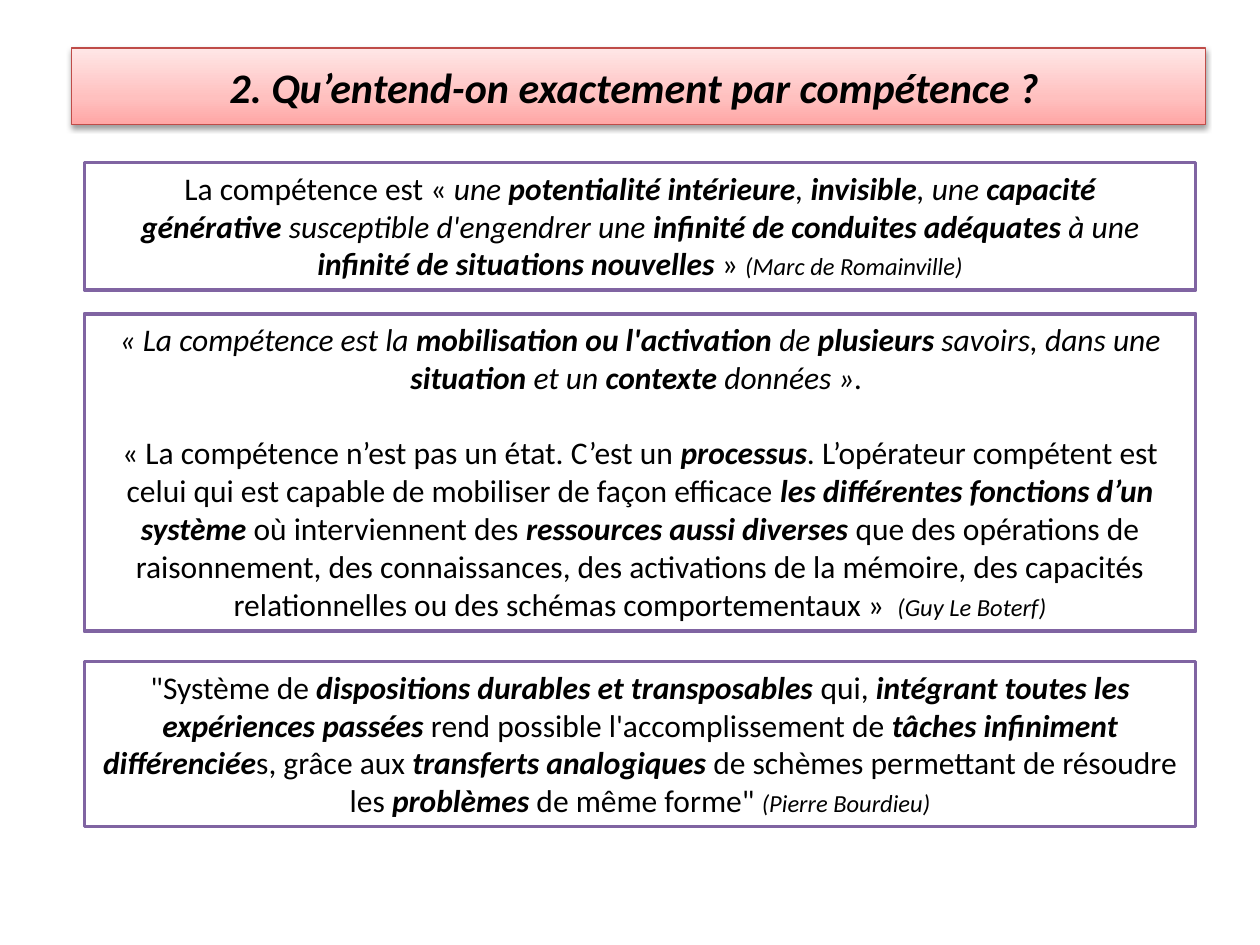
from copy import deepcopy
from dataclasses import dataclass

from lxml import etree
from pptx import Presentation
from pptx.dml.color import RGBColor
from pptx.enum.shapes import MSO_SHAPE
from pptx.enum.text import MSO_ANCHOR, PP_ALIGN
from pptx.oxml.ns import qn
from pptx.util import Inches, Pt

RECTANGLE = MSO_SHAPE.RECTANGLE
CENTER = PP_ALIGN.CENTER
TOP, MIDDLE = MSO_ANCHOR.TOP, MSO_ANCHOR.MIDDLE


@dataclass(frozen=True)
class Theme:
    font: str = "Calibri"
    title_size: float = 24
    body_size: float = 18
    source_size: float = 14
    paragraph_gap: float = 21.6
    text: str = "000000"
    box_fill: str = "FFFFFF"
    box_line: str = "8064A2"
    title_line: str = "BF4C48"
    title_stops: tuple = ((0, "FFA6A5"), (0.35, "FFC0BF"), (1, "FFE7E7"))


THEME = Theme()

# Run styles: (bold, italic, size)
PLAIN = (False, False, None)
ITALIC = (False, True, None)
STRONG = (True, True, None)
SOURCE = (False, True, THEME.source_size)

TITLE = "2. Qu’entend-on exactement par compétence ? "
TITLE_BOX = (0.57, 0.38, 9, 0.61)
QUOTE_LEFT, QUOTE_WIDTH = 0.67, 8.82

# Each quote: top, height, paragraphs of (space before, runs)
QUOTES = [
    (1.29, 1.01, [
        (0, [("La compétence est « ", PLAIN), ("une ", ITALIC),
             ("potentialité intérieure", STRONG), (", ", ITALIC),
             ("invisible", STRONG), (", une ", ITALIC), ("capacité", STRONG)]),
        (0, [("générative ", STRONG), ("susceptible d'engendrer une ", ITALIC),
             ("infinité de conduites adéquates ", STRONG), ("à une", ITALIC)]),
        (0, [("infinité de situations nouvelles", STRONG), (" » ", PLAIN),
             ("(Marc de Romainville)", SOURCE)]),
    ]),
    (2.49, 2.52, [
        (0, [("« La compétence est la ", ITALIC),
             ("mobilisation ou l'activation ", STRONG), ("de ", ITALIC),
             ("plusieurs", STRONG), (" savoirs, dans une", ITALIC)]),
        (0, [("situation", STRONG), (" et un ", ITALIC),
             ("contexte ", STRONG), ("données ». ", ITALIC)]),
        (THEME.paragraph_gap, [
            ("« La compétence n’est pas un état. C’est un ", PLAIN),
            ("processus", STRONG),
            (". L’opérateur compétent est celui qui est capable de mobiliser "
             "de façon efficace ", PLAIN),
            ("les différentes fonctions d’un système ", STRONG),
            ("où interviennent des ", PLAIN),
            ("ressources aussi diverses ", STRONG),
            ("que des opérations de raisonnement, des connaissances, des "
             "activations de la mémoire, des capacités relationnelles ou des "
             "schémas comportementaux » ", PLAIN),
            (" (Guy Le Boterf)", SOURCE)]),
    ]),
    (5.25, 1.31, [
        (0, [("\"Système de ", PLAIN),
             ("dispositions durables et transposables ", STRONG),
             ("qui,", PLAIN),
             (" intégrant toutes les expériences passées ", STRONG),
             ("rend possible l'accomplissement de ", PLAIN),
             ("tâches infiniment différenciée", STRONG),
             ("s, grâce aux ", PLAIN), ("transferts analogiques", STRONG),
             (" de schèmes permettant de résoudre les ", PLAIN),
             ("problèmes", STRONG), (" de même forme\" ", PLAIN),
             ("(Pierre Bourdieu)", SOURCE)]),
    ]),
]


def color(value):
    return RGBColor.from_string(value)


def add_box(slide, box, line_color, line_width, anchor):
    shape = slide.shapes.add_shape(RECTANGLE, *(Inches(n) for n in box))
    shape.shadow.inherit = False
    shape.line.color.rgb = color(line_color)
    shape.line.width = Pt(line_width)
    shape.text_frame.word_wrap = True
    shape.text_frame.vertical_anchor = anchor
    return shape


def style_paragraph(paragraph, size):
    paragraph.alignment = CENTER
    paragraph.font.name = THEME.font
    paragraph.font.size = Pt(size)
    paragraph.font.color.rgb = color(THEME.text)


def fill_gradient(shape, stops):
    """Fill from bottom to top with any number of stops."""
    shape.fill.gradient()
    shape.fill.gradient_angle = 90
    stop_list = shape._element.spPr.find(qn("a:gradFill")).find(qn("a:gsLst"))
    while len(stop_list) < len(stops):
        stop_list.append(deepcopy(stop_list[0]))
    for stop, (position, value) in zip(shape.fill.gradient_stops, stops):
        stop.position = position
        stop.color.rgb = color(value)


def add_shadow(shape):
    effects = shape._element.spPr.find(qn("a:effectLst"))
    shadow = etree.SubElement(
        effects, qn("a:outerShdw"), blurRad=str(Pt(3.1)), dist=str(Pt(1.6)),
        dir="5400000", rotWithShape="0")
    shade = etree.SubElement(shadow, qn("a:srgbClr"), val=THEME.text)
    etree.SubElement(shade, qn("a:alpha"), val="38000")


def add_title(slide, box, text):
    shape = add_box(slide, box, THEME.title_line, 0.75, MIDDLE)
    fill_gradient(shape, THEME.title_stops)
    add_shadow(shape)
    paragraph = shape.text_frame.paragraphs[0]
    paragraph.text = text
    style_paragraph(paragraph, THEME.title_size)
    paragraph.font.bold = paragraph.font.italic = True


def add_quote(slide, box, paragraphs):
    shape = add_box(slide, box, THEME.box_line, 2, TOP)
    shape.fill.solid()
    shape.fill.fore_color.rgb = color(THEME.box_fill)
    frame = shape.text_frame
    for index, (space_before, runs) in enumerate(paragraphs):
        paragraph = frame.add_paragraph() if index else frame.paragraphs[0]
        style_paragraph(paragraph, THEME.body_size)
        paragraph.space_before = Pt(space_before)
        for text, (bold, italic, size) in runs:
            run = paragraph.add_run()
            run.text = text
            run.font.bold = bold
            run.font.italic = italic
            if size:
                run.font.size = Pt(size)


def main():
    presentation = Presentation()
    presentation.slide_width = Inches(10)
    presentation.slide_height = Inches(7.5)
    slide = presentation.slides.add_slide(presentation.slide_layouts[6])

    # Quotes, then the title band
    for top, height, paragraphs in QUOTES:
        add_quote(slide, (QUOTE_LEFT, top, QUOTE_WIDTH, height), paragraphs)
    add_title(slide, TITLE_BOX, TITLE)

    presentation.save("out.pptx")


if __name__ == "__main__":
    main()
